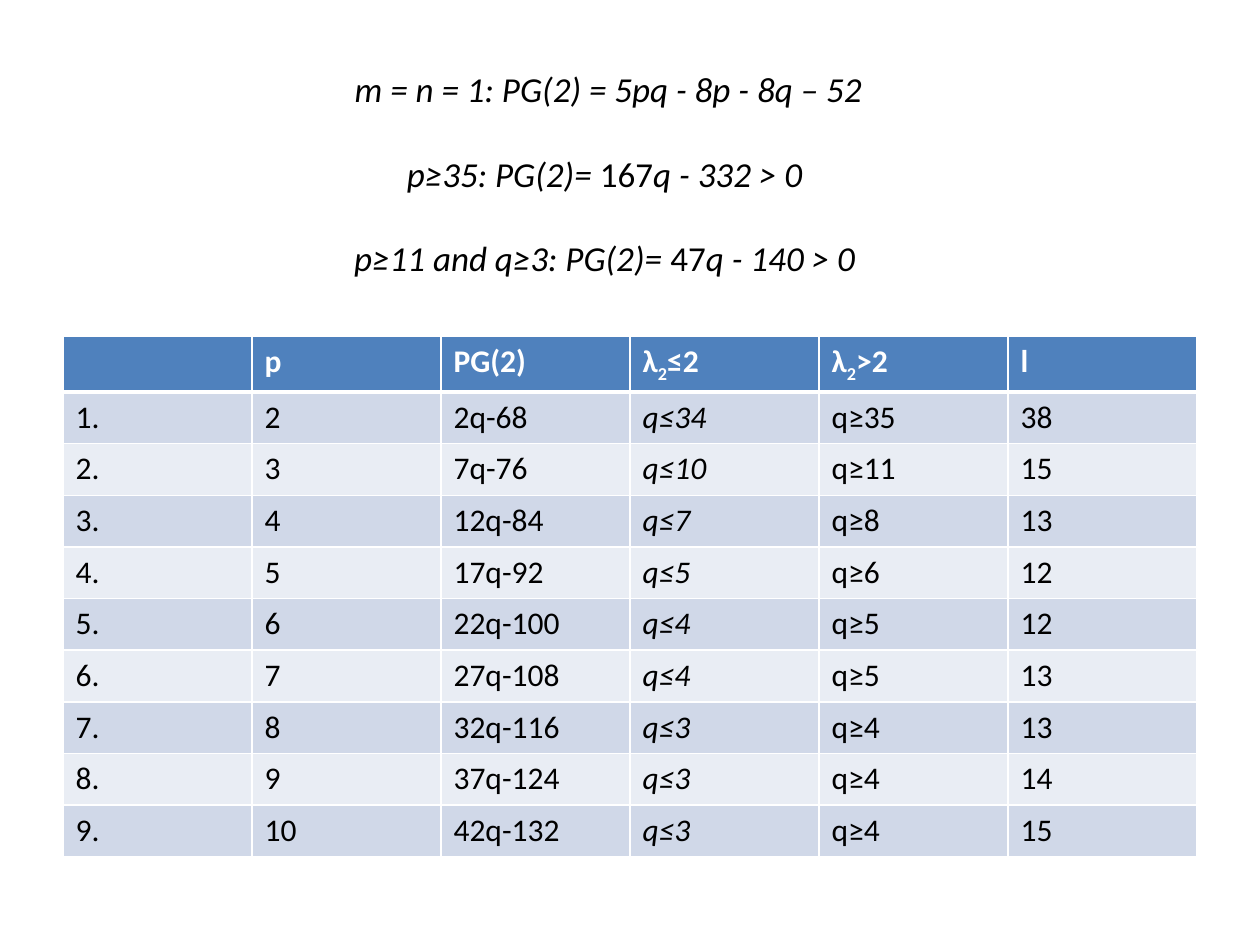
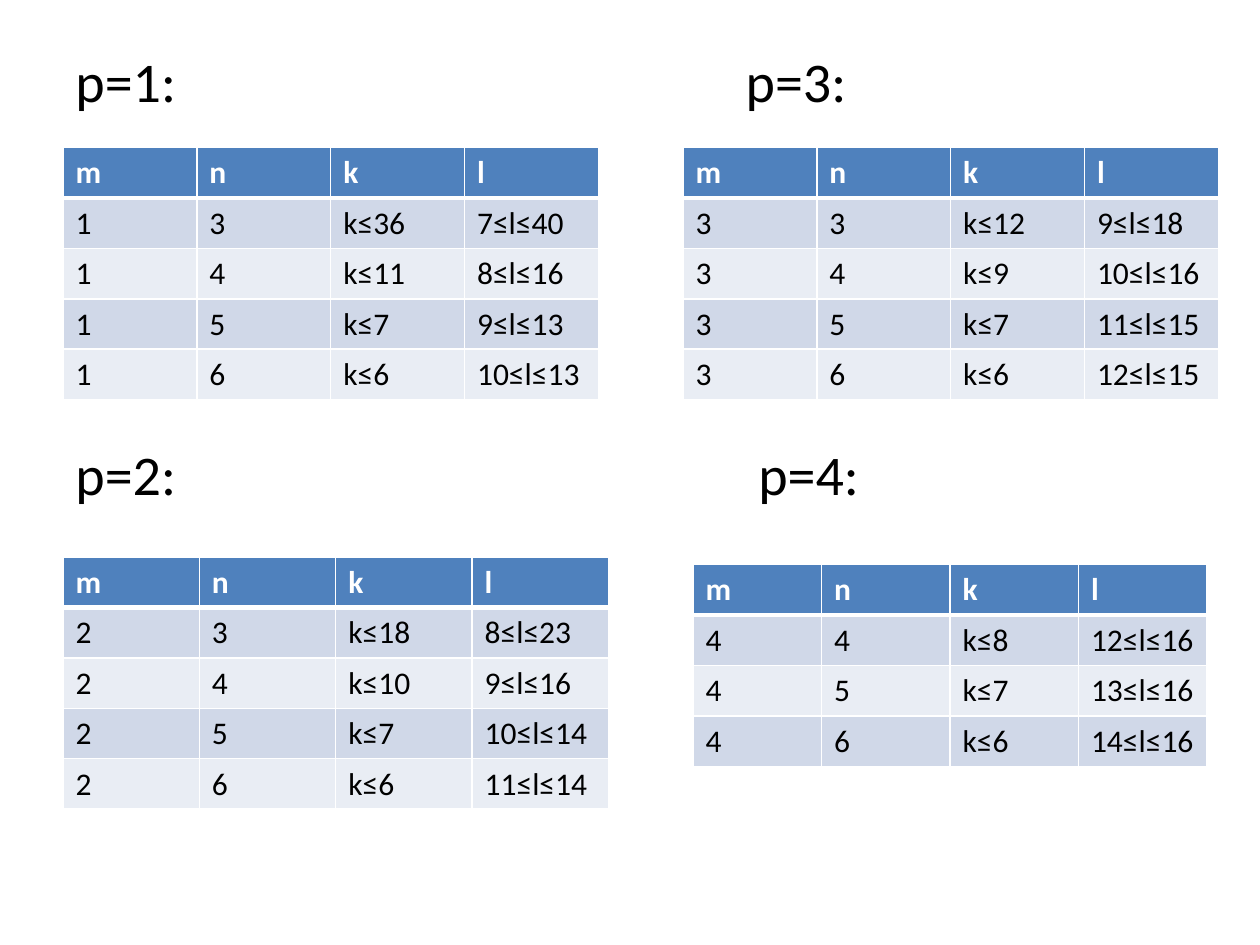
from dataclasses import dataclass

from lxml import etree
from pptx import Presentation
from pptx.dml.color import RGBColor
from pptx.enum.text import MSO_ANCHOR, PP_ALIGN
from pptx.oxml.ns import qn
from pptx.util import Inches, Pt

CENTER = PP_ALIGN.CENTER
LEFT = PP_ALIGN.LEFT
MIDDLE = MSO_ANCHOR.MIDDLE
TOP = MSO_ANCHOR.TOP
BLANK_LAYOUT = 6


@dataclass(frozen=True)
class Theme:
    font: str = "Calibri"
    text: str = "000000"
    header_text: str = "FFFFFF"
    header_fill: str = "4F81BD"
    bands: tuple = ("D0D8E8", "E9EDF4")
    border: str = "FFFFFF"
    thin_border: float = 1
    thick_border: float = 3
    formula_size: float = 20
    formula_gap: float = 24.4
    caption_size: float = 32
    table_size: float = 18


THEME = Theme()

FORMULAS = [
    [("m = n = 1: PG(2) = 5pq - 8p - 8q – 52", True)],
    [("p≥35: PG(2)= ", True), ("167", False), ("q - 332 > 0 ", True)],
    [("p≥11 and q≥3: PG(2)= ", True), ("47", False), ("q - 140 > 0 ", True)],
]

BOUNDS_HEADER = ["", "p", "PG(2)", ("λ", "2", "≤2"), ("λ", "2", ">2"), "l"]
BOUNDS_ROWS = [
    ("1.", "2", "2q-68", "q≤34", "q≥35", "38"),
    ("2.", "3", "7q-76", "q≤10", "q≥11", "15"),
    ("3.", "4", "12q-84", "q≤7", "q≥8", "13"),
    ("4.", "5", "17q-92", "q≤5", "q≥6", "12"),
    ("5.", "6", "22q-100", "q≤4", "q≥5", "12"),
    ("6.", "7", "27q-108", "q≤4", "q≥5", "13"),
    ("7.", "8", "32q-116", "q≤3", "q≥4", "13"),
    ("8.", "9", "37q-124", "q≤3", "q≥4", "14"),
    ("9.", "10", "42q-132", "q≤3", "q≥4", "15"),
]
ITALIC_COLUMN = 3

CASE_HEADER = ["m", "n", "k", "l"]
CASES = [
    ("p=1:", (0.5, 0.32), (0.5, 1.17, 4.25), [
        ("1", "3", "k≤36", "7≤l≤40"),
        ("1", "4", "k≤11", "8≤l≤16"),
        ("1", "5", "k≤7", "9≤l≤13"),
        ("1", "6", "k≤6", "10≤l≤13"),
    ]),
    ("p=2:", (0.5, 3.44), (0.5, 4.42, 4.33), [
        ("2", "3", "k≤18", "8≤l≤23"),
        ("2", "4", "k≤10", "9≤l≤16"),
        ("2", "5", "k≤7", "10≤l≤14"),
        ("2", "6", "k≤6", "11≤l≤14"),
    ]),
    ("p=3:", (5.82, 0.32), (5.42, 1.17, 4.25), [
        ("3", "3", "k≤12", "9≤l≤18"),
        ("3", "4", "k≤9", "10≤l≤16"),
        ("3", "5", "k≤7", "11≤l≤15"),
        ("3", "6", "k≤6", "12≤l≤15"),
    ]),
    ("p=4:", (5.92, 3.44), (5.5, 4.48, 4.08), [
        ("4", "4", "k≤8", "12≤l≤16"),
        ("4", "5", "k≤7", "13≤l≤16"),
        ("4", "6", "k≤6", "14≤l≤16"),
    ]),
]


def add_run(paragraph, text, size, color=THEME.text, bold=False, italic=False):
    run = paragraph.add_run()
    run.text = text
    run.font.name = THEME.font
    run.font.size = Pt(size)
    run.font.bold = bold
    run.font.italic = italic
    run.font.color.rgb = RGBColor.from_string(color)
    return run


def add_text(slide, left, top, width, height, lines, size,
             align=LEFT, anchor=TOP, gap=0):
    shape = slide.shapes.add_textbox(
        Inches(left), Inches(top), Inches(width), Inches(height))
    frame = shape.text_frame
    frame.word_wrap = True
    frame.vertical_anchor = anchor
    for index, line in enumerate(lines):
        paragraph = frame.add_paragraph() if index else frame.paragraphs[0]
        paragraph.alignment = align
        paragraph.space_before = Pt(gap if index else 0)
        for text, italic in line:
            add_run(paragraph, text, size, italic=italic)


def set_borders(cell, top, bottom):
    properties = cell._tc.get_or_add_tcPr()
    thin = THEME.thin_border
    for side, width in (("L", thin), ("R", thin), ("T", top), ("B", bottom)):
        line = etree.SubElement(properties, qn(f"a:ln{side}"), w=str(Pt(width)))
        fill = etree.SubElement(line, qn("a:solidFill"))
        etree.SubElement(fill, qn("a:srgbClr"), val=THEME.border)


def fill_cell(cell, color):
    cell.fill.solid()
    cell.fill.fore_color.rgb = RGBColor.from_string(color)


def write_header(cell, content):
    set_borders(cell, THEME.thin_border, THEME.thick_border)
    fill_cell(cell, THEME.header_fill)
    parts = content if isinstance(content, tuple) else (content,)
    for index, part in enumerate(parts):
        if part:
            run = add_run(cell.text_frame.paragraphs[0], part,
                          THEME.table_size, THEME.header_text, bold=True)
            if index == 1:
                run.font._element.set("baseline", "-25000")


def write_body(cell, text, row_index, italic):
    top = THEME.thin_border if row_index else THEME.thick_border
    set_borders(cell, top, THEME.thin_border)
    fill_cell(cell, THEME.bands[row_index % 2])
    add_run(cell.text_frame.paragraphs[0], text, THEME.table_size, italic=italic)


def add_banded_table(slide, left, top, width, row_height, header, rows,
                     italic_column=None):
    row_count = len(rows) + 1
    table = slide.shapes.add_table(
        row_count, len(header), Inches(left), Inches(top),
        Inches(width), Inches(row_height * row_count)).table
    for column in table.columns:
        column.width = Inches(width / len(header))
    for row in table.rows:
        row.height = Inches(row_height)
    for column_index, content in enumerate(header):
        write_header(table.cell(0, column_index), content)
    for row_index, values in enumerate(rows):
        for column_index, text in enumerate(values):
            write_body(table.cell(row_index + 1, column_index), text,
                       row_index, column_index == italic_column)


def add_case(slide, caption, caption_place, table_place, rows):
    add_text(slide, *caption_place, 2, 0.65, [[(caption, False)]],
             THEME.caption_size)
    add_banded_table(slide, *table_place, 0.4, CASE_HEADER, rows)


def build_bounds_slide(slide):
    add_text(slide, 0.33, 0.75, 9, 1.25, FORMULAS, THEME.formula_size,
             CENTER, MIDDLE, THEME.formula_gap)
    add_banded_table(slide, 0.5, 2.67, 9, 0.41, BOUNDS_HEADER, BOUNDS_ROWS,
                     ITALIC_COLUMN)


def build_cases_slide(slide):
    for case in CASES:
        add_case(slide, *case)


def main():
    presentation = Presentation()
    presentation.slide_width = Inches(10)
    presentation.slide_height = Inches(7.5)
    for build in (build_bounds_slide, build_cases_slide):
        build(presentation.slides.add_slide(
            presentation.slide_layouts[BLANK_LAYOUT]))
    presentation.save("out.pptx")


if __name__ == "__main__":
    main()
